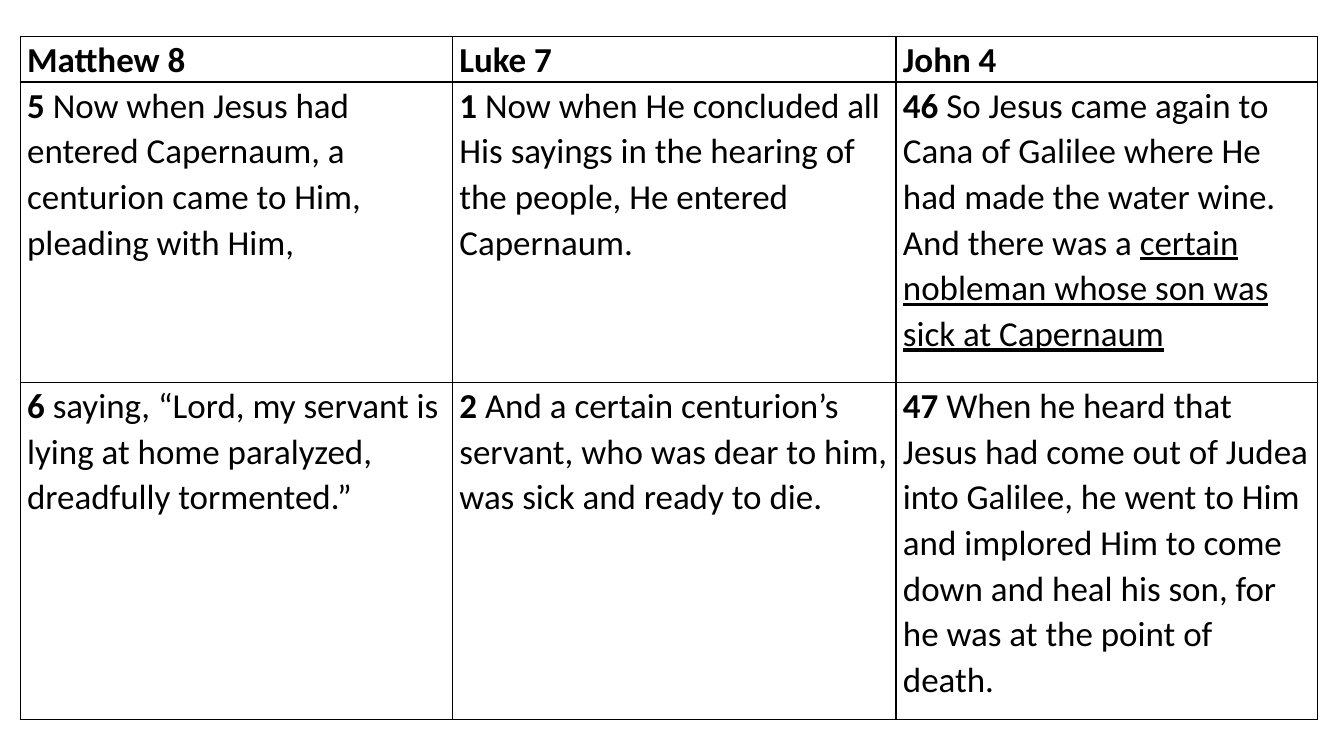
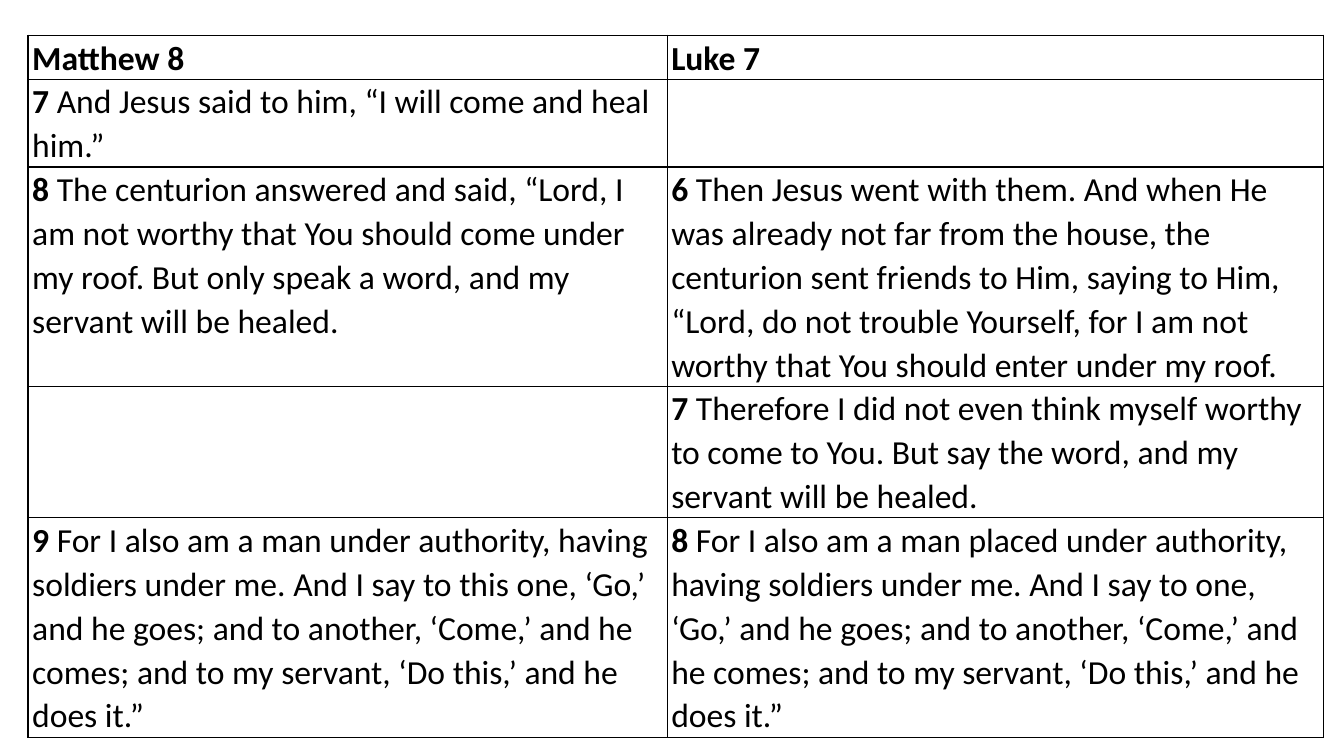
from dataclasses import dataclass

import lxml.etree
import pptx
import pptx.dml.color
import pptx.oxml.ns
import pptx.util

Pt = pptx.util.Pt
BLACK = pptx.dml.color.RGBColor(0x00, 0x00, 0x00)
WHITE = pptx.dml.color.RGBColor(0xFF, 0xFF, 0xFF)
FONT = "Calibri"
LINE_SPACING = 1.07
BORDER_WIDTH = Pt(1)
BLANK_LAYOUT = 6


@dataclass(frozen=True)
class Passage:
    """A bold lead (heading or verse number), then plain and underlined text."""
    lead: str = ""
    text: str = ""
    underlined: str = ""


@dataclass(frozen=True)
class Comparison:
    """A slide that sets parallel gospel passages side by side, in points."""
    left: float
    top: float
    column_widths: list[float]
    row_heights: list[float]
    side_margin: float
    font_size: float
    rows: list[list[Passage]]


def add_text(para, text: str, *, size: float, bold: bool = False,
             underline: bool = False) -> None:
    span = para.add_run()
    span.text = text
    span.font.name = FONT
    span.font.size = Pt(size)
    span.font.bold = bold
    span.font.underline = underline
    span.font.color.rgb = BLACK


def add_borders(cell) -> None:
    qn = pptx.oxml.ns.qn
    properties = cell._tc.get_or_add_tcPr()
    for side in ("lnL", "lnR", "lnT", "lnB"):
        line = lxml.etree.SubElement(properties, qn(f"a:{side}"), w=str(BORDER_WIDTH))
        fill = lxml.etree.SubElement(line, qn("a:solidFill"))
        lxml.etree.SubElement(fill, qn("a:srgbClr"), val=str(BLACK))


def fill_cell(cell, passage: Passage, comparison: Comparison) -> None:
    add_borders(cell)
    cell.fill.solid()
    cell.fill.fore_color.rgb = WHITE
    cell.margin_left = cell.margin_right = Pt(comparison.side_margin)
    cell.margin_top = cell.margin_bottom = 0
    para = cell.text_frame.paragraphs[0]
    para.line_spacing = LINE_SPACING
    size = comparison.font_size
    if passage.lead:
        add_text(para, passage.lead, size=size, bold=True)
    if passage.text:
        add_text(para, " " + passage.text, size=size)
    if passage.underlined:
        add_text(para, passage.underlined, size=size, underline=True)


def add_comparison(deck, comparison: Comparison) -> None:
    page = deck.slides.add_slide(deck.slide_layouts[BLANK_LAYOUT])
    widths, heights = comparison.column_widths, comparison.row_heights
    table = page.shapes.add_table(
        len(heights), len(widths), Pt(comparison.left), Pt(comparison.top),
        Pt(sum(widths)), Pt(sum(heights))).table
    table.first_row = table.horz_banding = False
    for column, width in zip(table.columns, widths):
        column.width = Pt(width)
    for row, height, passages in zip(table.rows, heights, comparison.rows):
        row.height = Pt(height)
        for cell, passage in zip(row.cells, passages):
            fill_cell(cell, passage, comparison)


# The sick servant and the nobleman's son
SICKNESS = Comparison(
    left=14.4, top=26, column_widths=[308.8, 316.8, 301],
    row_heights=[32.5, 214.5, 241], side_margin=5, font_size=25,
    rows=[
        [Passage("Matthew 8"), Passage("Luke 7"), Passage("John 4")],
        [
            Passage("5", "Now when Jesus had entered Capernaum, a centurion "
                    "came to Him, pleading with Him,"),
            Passage("1", "Now when He concluded all His sayings in the hearing "
                    "of the people, He entered Capernaum."),
            Passage("46", "So Jesus came again to Cana of Galilee where He had "
                    "made the water wine. And there was a ",
                    "certain nobleman whose son was sick at Capernaum"),
        ],
        [
            Passage("6", "saying, “Lord, my servant is lying at home paralyzed, "
                    "dreadfully tormented.”"),
            Passage("2", "And a certain centurion’s servant, who was dear to "
                    "him, was sick and ready to die."),
            Passage("47", "When he heard that Jesus had come out of Judea into "
                    "Galilee, he went to Him and implored Him to come down and "
                    "heal his son, for he was at the point of death."),
        ],
    ])

# The centurion's faith: rows are as tall as their lines of text
TEXT_LINE = 31.3
FAITH = Comparison(
    left=20, top=25.2, column_widths=[456.5, 468.7],
    row_heights=[TEXT_LINE * lines for lines in (1, 2, 5, 3, 5)],
    side_margin=3, font_size=24,
    rows=[
        [Passage("Matthew 8"), Passage("Luke 7")],
        [
            Passage("7", "And Jesus said to him, “I will come and heal him.”"),
            Passage(),
        ],
        [
            Passage("8", "The centurion answered and said, “Lord, I am not "
                    "worthy that You should come under my roof. But only speak "
                    "a word, and my servant will be healed."),
            Passage("6", "Then Jesus went with them. And when He was already "
                    "not far from the house, the centurion sent friends to Him, "
                    "saying to Him, “Lord, do not trouble Yourself, for I am "
                    "not worthy that You should enter under my roof."),
        ],
        [
            Passage(),
            Passage("7", "Therefore I did not even think myself worthy to come "
                    "to You. But say the word, and my servant will be healed."),
        ],
        [
            Passage("9", "For I also am a man under authority, having soldiers "
                    "under me. And I say to this one, ‘Go,’ and he goes; and to "
                    "another, ‘Come,’ and he comes; and to my servant, ‘Do "
                    "this,’ and he does it.”"),
            Passage("8", "For I also am a man placed under authority, having "
                    "soldiers under me. And I say to one, ‘Go,’ and he goes; "
                    "and to another, ‘Come,’ and he comes; and to my servant, "
                    "‘Do this,’ and he does it.”"),
        ],
    ])


def main() -> None:
    deck = pptx.Presentation()
    deck.slide_width, deck.slide_height = Pt(960), Pt(540)
    for comparison in (SICKNESS, FAITH):
        add_comparison(deck, comparison)
    deck.save("out.pptx")


if __name__ == "__main__":
    main()
